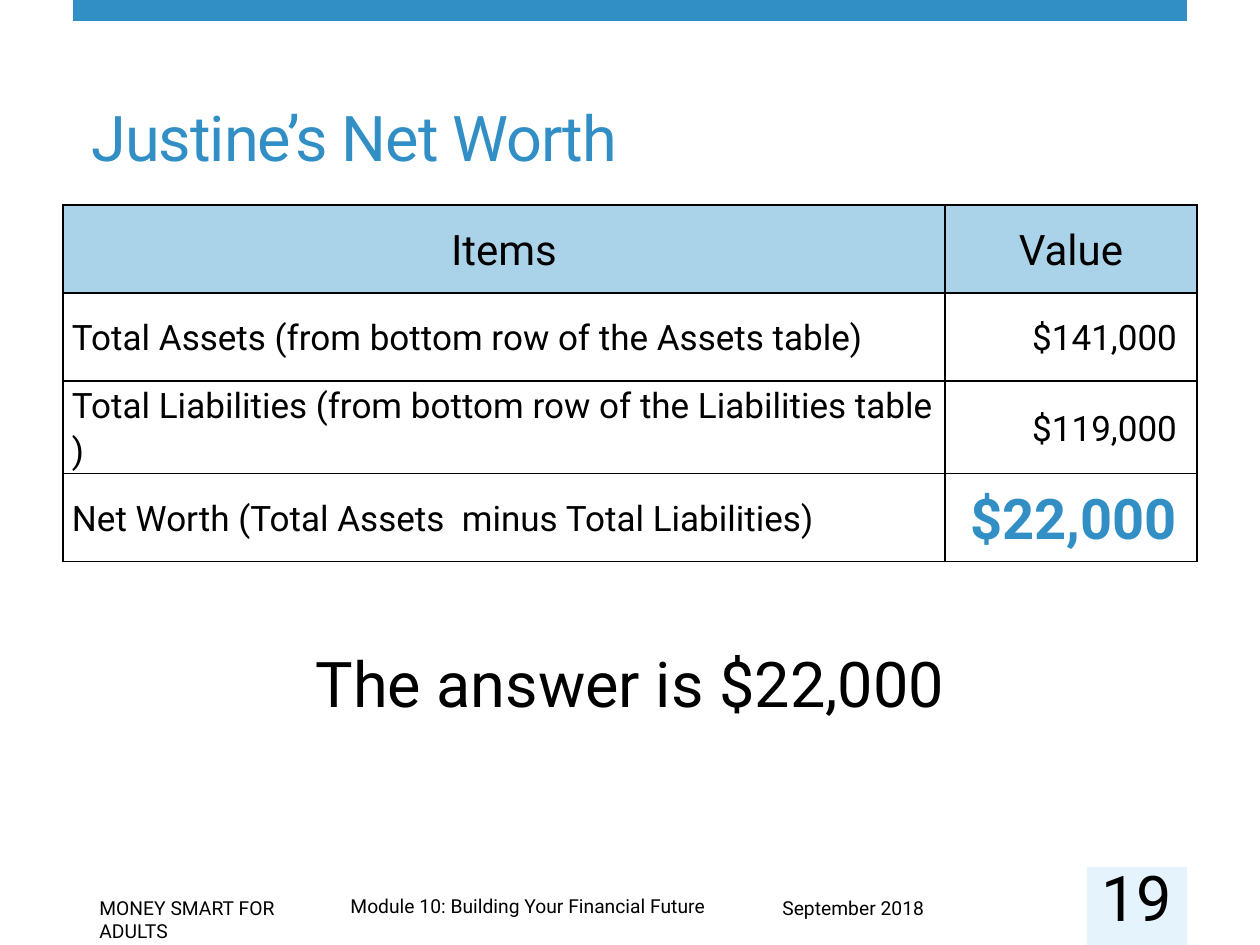
"""Build the slide that works out Justine's net worth."""
from dataclasses import dataclass

from lxml import etree
from pptx import Presentation
from pptx import util as u
from pptx.dml.color import RGBColor
from pptx.enum import shapes, text
from pptx.oxml.ns import qn

ALIGN = text.PP_ALIGN
ANCHOR = text.MSO_ANCHOR


@dataclass(frozen=True)
class Theme:
    font: str = "Roboto"
    black: str = "000000"
    accent: str = "318FC5"
    header: str = "AAD3EA"
    pale: str = "E4F3FC"
    footer_size: int = 11
    body_size: int = 20
    header_size: int = 24
    result_size: int = 32
    title_size: int = 36


def px(length):
    return u.Emu(round(length * 914400 / 126))


class SlideBuilder:
    def __init__(self, slide, theme):
        self.slide = slide
        self.theme = theme

    def rectangle(self, left, top, width, height, color):
        shape = self.slide.shapes.add_shape(
            shapes.MSO_SHAPE.RECTANGLE, px(left), px(top), px(width), px(height))
        shape.shadow.inherit = False
        shape.fill.solid()
        shape.fill.fore_color.rgb = RGBColor.from_string(color)
        shape.line.fill.background()

    def add_words(self, paragraph, words, size, color=None, align=ALIGN.LEFT,
                  bold=False, tracking=0):
        paragraph.alignment = align
        run = paragraph.add_run()
        run.text = words
        run.font.name = self.theme.font
        run.font.size = u.Pt(size)
        run.font.bold = bold
        run.font.color.rgb = RGBColor.from_string(color or self.theme.black)
        if tracking:
            run._r.get_or_add_rPr().set("spc", str(tracking))

    def label(self, left, top, width, height, words, size,
              anchor=ANCHOR.TOP, inset=True, **style):
        box = self.slide.shapes.add_textbox(px(left), px(top), px(width), px(height))
        frame = box.text_frame
        frame.word_wrap = True
        frame.vertical_anchor = anchor
        if not inset:
            frame.margin_left = frame.margin_right = 0
            frame.margin_top = frame.margin_bottom = 0
        self.add_words(frame.paragraphs[0], words, size, **style)

    def border(self, cell):
        properties = cell._tc.get_or_add_tcPr()
        for index, side in enumerate(("a:lnL", "a:lnR", "a:lnT", "a:lnB")):
            line = etree.Element(qn(side), w=str(u.Pt(1)))
            fill = etree.SubElement(line, qn("a:solidFill"))
            etree.SubElement(fill, qn("a:srgbClr"), val=self.theme.black)
            properties.insert(index, line)

    def cell(self, cell, words, size, fill=None, right_inset=9, **style):
        cell.margin_left, cell.margin_right = px(9), px(right_inset)
        cell.margin_top = cell.margin_bottom = 0
        cell.vertical_anchor = ANCHOR.MIDDLE
        if fill:
            cell.fill.solid()
            cell.fill.fore_color.rgb = RGBColor.from_string(fill)
        else:
            cell.fill.background()
        self.border(cell)
        paragraph = cell.text_frame.paragraphs[0]
        paragraph.line_spacing = 1.1
        self.add_words(paragraph, words, size, **style)

    def table(self, left, top, columns, row_height, headings, rows):
        theme = self.theme
        count = len(rows) + 1
        table = self.slide.shapes.add_table(
            count, len(columns), px(left), px(top),
            px(sum(columns)), px(row_height * count)).table
        table.horz_banding = table.first_row = False
        for column, width in zip(table.columns, columns):
            column.width = px(width)
        for row in table.rows:
            row.height = px(row_height)
        for index, heading in enumerate(headings):
            self.cell(table.cell(0, index), heading, theme.header_size,
                      fill=theme.header, align=ALIGN.CENTER)
        for index, (item, value) in enumerate(rows, start=1):
            self.cell(table.cell(index, 0), item, theme.body_size)
            result = index == len(rows)
            self.cell(table.cell(index, 1), value,
                      theme.result_size if result else theme.body_size,
                      color=theme.accent if result else theme.black,
                      bold=result, align=ALIGN.RIGHT, right_inset=20)


def main():
    presentation = Presentation()
    presentation.slide_width, presentation.slide_height = px(1260), px(945)
    theme = Theme()
    slide = presentation.slides.add_slide(presentation.slide_layouts[6])
    builder = SlideBuilder(slide, theme)

    builder.rectangle(73, 0, 1114, 21, theme.accent)
    builder.rectangle(1087, 867, 100, 78, theme.pale)
    footers = [
        (87, 890, 263, "MONEY SMART FOR ADULTS"),
        (338, 888, 713, "Module 10: Building Your Financial Future"),
        (770, 890, 318, "September 2018"),
    ]
    for left, top, width, words in footers:
        builder.label(left, top, width, 36, words, theme.footer_size)
    builder.label(79, 59, 1033, 121, "Justine’s Net Worth", theme.title_size,
                  anchor=ANCHOR.BOTTOM, color=theme.accent, tracking=-60)
    builder.table(63, 205, (882, 252), 88, ("Items", "Value"), [
        ("Total Assets (from bottom row of the Assets table)", "$141,000"),
        ("Total Liabilities (from bottom row of the Liabilities table )", "$119,000"),
        ("Net Worth (Total Assets  minus Total Liabilities)", "$22,000"),
    ])
    builder.label(63, 638, 1134, 139, "The answer is $22,000", theme.title_size,
                  align=ALIGN.CENTER)
    builder.label(1087, 877, 100, 39, "19", theme.title_size,
                  anchor=ANCHOR.MIDDLE, inset=False, align=ALIGN.CENTER)
    presentation.save("out.pptx")


if __name__ == "__main__":
    main()
